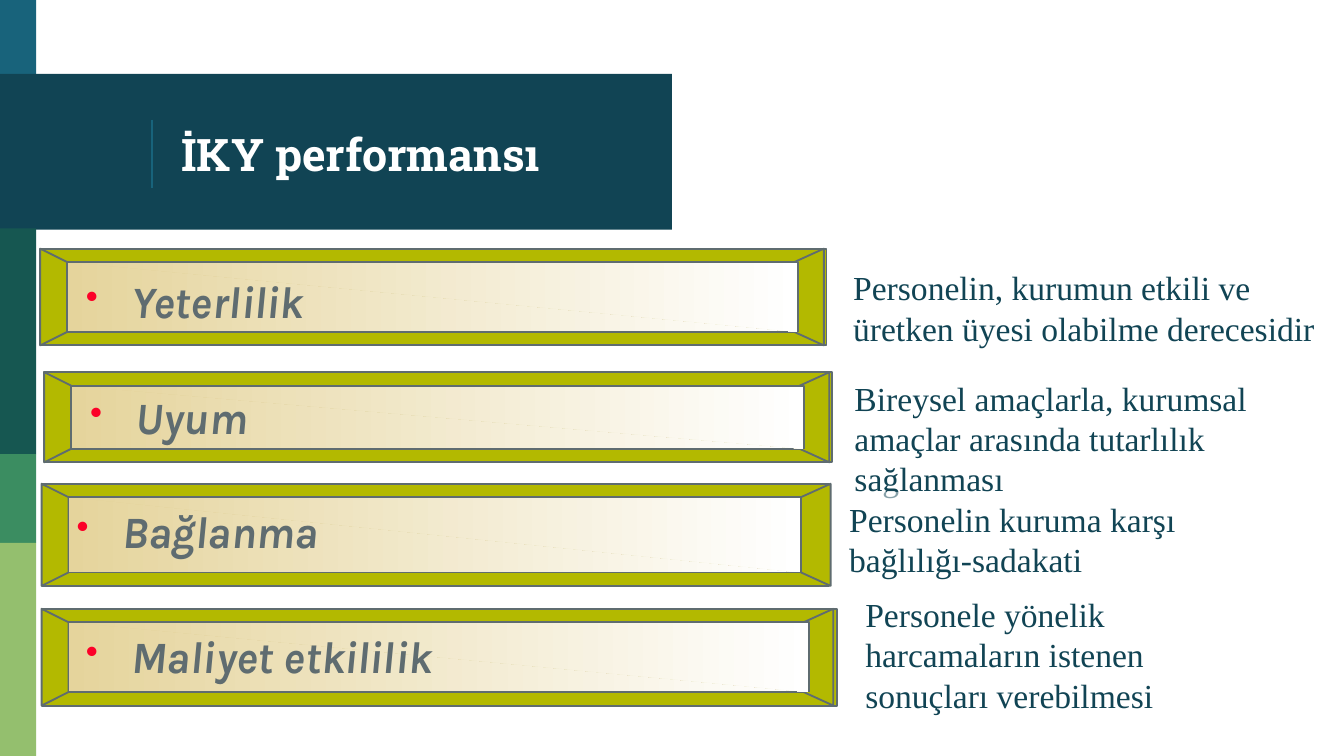
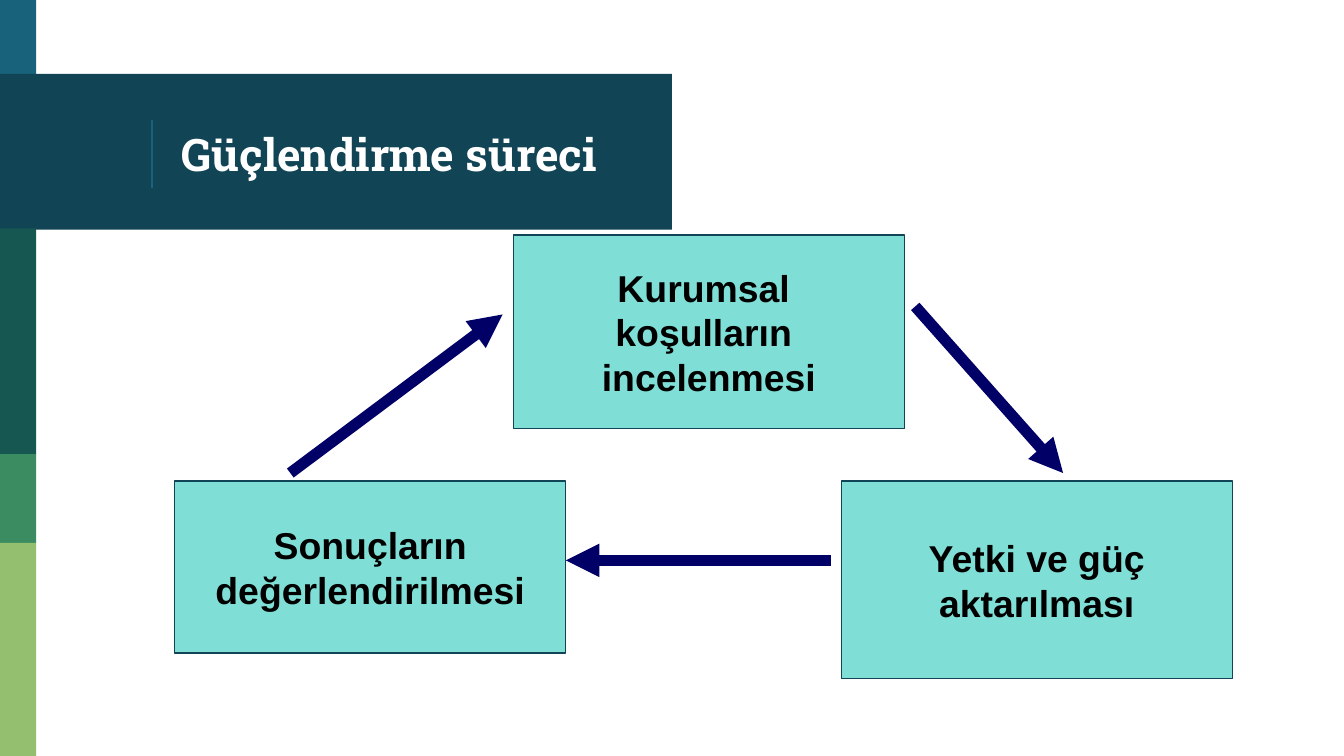
from dataclasses import dataclass
from typing import Optional

from lxml import etree
from pptx import Presentation
from pptx import util as u
from pptx.dml.color import RGBColor
from pptx.enum import shapes, text
from pptx.oxml.ns import qn

PX = u.Inches(1) // 100

WHITE = RGBColor(0xFF, 0xFF, 0xFF)
BLACK = RGBColor(0x00, 0x00, 0x00)
BLUE = RGBColor(0x18, 0x63, 0x7B)
NAVY = RGBColor(0x11, 0x44, 0x54)
PINE = RGBColor(0x16, 0x57, 0x51)
GREEN = RGBColor(0x3B, 0x8D, 0x61)
LEAF = RGBColor(0x94, 0xBF, 0x6E)
OLIVE = RGBColor(0xB3, 0xB9, 0x00)
SAND = RGBColor(0xE5, 0xD4, 0x9C)
SLATE = RGBColor(0x5F, 0x6C, 0x70)
RED = RGBColor(0xFC, 0x01, 0x28)
AQUA = RGBColor(0x7F, 0xDF, 0xD6)
INK = RGBColor(0x00, 0x00, 0x66)


@dataclass(frozen=True)
class Box:
    x: int
    y: int
    w: int
    h: int

    def emu(self) -> tuple[int, ...]:
        return tuple(v * PX for v in (self.x, self.y, self.w, self.h))


@dataclass(frozen=True)
class Band:
    box: Box
    color: RGBColor


@dataclass(frozen=True)
class Bar:
    label: str
    box: Box
    cap_right: int
    label_box: Box


@dataclass(frozen=True)
class Note:
    content: str
    box: Box
    wrap: bool = True


@dataclass(frozen=True)
class Step:
    content: str
    box: Box


@dataclass(frozen=True)
class Arrow:
    x1: int
    y1: int
    x2: int
    y2: int


BANDS = [
    Band(Box(0, 0, 27, 58), BLUE),
    Band(Box(0, 55, 500, 116), NAVY),
    Band(Box(0, 170, 27, 168), PINE),
    Band(Box(0, 338, 27, 66), GREEN),
    Band(Box(0, 404, 27, 159), LEAF),
]
TITLE_RULE = Arrow(113, 89, 113, 140)
TITLE_BOX = Box(125, 58, 351, 112)

BARS = [
    Bar("Yeterlilik", Box(30, 185, 585, 72), 613, Box(55, 199, 206, 73)),
    Bar("Uyum", Box(33, 277, 586, 67), 617, Box(58, 285, 152, 69)),
    Bar("Bağlanma", Box(31, 360, 586, 76), 618, Box(48, 370, 222, 50)),
    Bar("Maliyet etkililik", Box(31, 453, 592, 72), 620, Box(55, 463, 316, 74)),
]
NOTES = [
    Note("Personelin, kurumun etkili ve üretken üyesi olabilme derecesidir",
         Box(625, 194, 383, 71)),
    Note("Bireysel amaçlarla, kurumsal amaçlar arasında tutarlılık sağlanması",
         Box(626, 276, 360, 101)),
    Note("Personelin kuruma karşı\nbağlılığı-sadakati", Box(622, 366, 266, 71), wrap=False),
    Note("Personele yönelik harcamaların istenen sonuçları verebilmesi",
         Box(634, 437, 273, 101)),
]
STEPS = [
    Step("Kurumsal \nkoşulların \nincelenmesi", Box(382, 175, 291, 144)),
    Step("Yetki ve güç\naktarılması", Box(626, 358, 291, 147)),
    Step("Sonuçların\ndeğerlendirilmesi", Box(130, 358, 291, 128)),
]
ARROWS = [
    Arrow(681, 228, 791, 352),
    Arrow(618, 417, 421, 417),
    Arrow(216, 352, 374, 234),
]


def write(tf, content: str, *, font: str, size: int, color: RGBColor,
          bold: bool = False, italic: bool = False,
          align: text.PP_ALIGN = text.PP_ALIGN.LEFT) -> None:
    for i, line in enumerate(content.split("\n")):
        p = tf.add_paragraph() if i else tf.paragraphs[0]
        p.alignment = align
        r = p.add_run()
        r.text = line
        r.font.name, r.font.size = font, u.Pt(size)
        r.font.bold, r.font.italic = bold, italic
        r.font.color.rgb = color


def set_frame(tf, *, wrap: bool, anchor: text.MSO_ANCHOR, grow: bool = False,
              side: int = 10, edge: int = 5) -> None:
    tf.word_wrap = wrap
    tf.vertical_anchor = anchor
    tf.auto_size = text.MSO_AUTO_SIZE.SHAPE_TO_FIT_TEXT if grow else text.MSO_AUTO_SIZE.NONE
    tf.margin_left = tf.margin_right = side * PX
    tf.margin_top = tf.margin_bottom = edge * PX


def add_bullet(p) -> None:
    p.space_before = u.Pt(5)
    pPr = p._p.get_or_add_pPr()
    pPr.set("marL", str(34 * PX))
    pPr.set("indent", str(-34 * PX))
    clr = etree.SubElement(pPr, qn("a:buClr"))
    etree.SubElement(clr, qn("a:srgbClr"), val=str(RED))
    etree.SubElement(pPr, qn("a:buSzPct"), val="80000")
    etree.SubElement(pPr, qn("a:buChar"), char="•")


def add_rect(s, box: Box, fill: RGBColor, line: Optional[RGBColor] = None,
             alpha: int = 100):
    sp = s.shapes.add_shape(shapes.MSO_SHAPE.RECTANGLE, *box.emu())
    sp.shadow.inherit = False
    sp.fill.solid()
    sp.fill.fore_color.rgb = fill
    if alpha < 100:
        clr = sp.element.spPr.find(".//" + qn("a:srgbClr"))
        etree.SubElement(clr, qn("a:alpha"), val=str(alpha * 1000))
    if line is None:
        sp.line.fill.background()
    else:
        sp.line.color.rgb = line
        sp.line.width = u.Pt(0.75)
    return sp


def add_line(s, a: Arrow, color: RGBColor, width: float, head: bool = False):
    c = s.shapes.add_connector(shapes.MSO_CONNECTOR.STRAIGHT,
                               a.x1 * PX, a.y1 * PX, a.x2 * PX, a.y2 * PX)
    c.line.color.rgb = color
    c.line.width = u.Pt(width)
    if head:
        etree.SubElement(c.line._get_or_add_ln(), qn("a:tailEnd"), type="triangle")
    etree.SubElement(c.element.spPr, qn("a:effectLst"))
    return c


def add_facet(group, points: list[tuple[int, int]], *, gradient: bool = False,
              close: bool = True) -> None:
    fb = group.shapes.build_freeform(*points[0], scale=PX)
    fb.add_line_segments(points[1:], close=close)
    sp = fb.convert_to_shape()
    sp.shadow.inherit = False
    if gradient:
        sp.fill.gradient()
        sp.fill.gradient_angle = 0
        for stop, color in zip(sp.fill.gradient_stops, (SAND, WHITE)):
            stop.color.rgb = color
    else:
        sp.fill.solid()
        sp.fill.fore_color.rgb = OLIVE
    sp.line.color.rgb = SLATE
    sp.line.width = u.Pt(1)


def add_bar(s, bar: Bar) -> None:
    group = s.shapes.add_group_shape()
    x, y = bar.box.x, bar.box.y
    right, bottom = x + bar.box.w, y + bar.box.h
    top_in, bottom_in = y + 10, bottom - 10
    left_in, right_in = x + 20, right - 20
    cap = bar.cap_right
    add_facet(group, [(x, y), (x, bottom), (right, bottom), (right, y)])
    add_facet(group, [(x, bottom), (left_in, bottom_in), (left_in, top_in), (x, y)])
    add_facet(group, [(left_in, top_in), (left_in, bottom_in),
                      (right_in, bottom_in), (right_in, top_in)], gradient=True)
    add_facet(group, [(cap, bottom), (cap - 22, bottom_in), (cap - 22, top_in), (cap, y)])
    add_facet(group, [(left_in + 1, top_in), (right_in - 1, top_in),
                      (right_in - 1, bottom_in)], gradient=True, close=False)
    tf = group.shapes.add_textbox(*bar.label_box.emu()).text_frame
    set_frame(tf, wrap=False, anchor=text.MSO_ANCHOR.TOP, grow=True, side=9)
    write(tf, bar.label, font="Karla", size=24, color=SLATE, bold=True, italic=True)
    add_bullet(tf.paragraphs[0])


def add_note(s, note: Note) -> None:
    tf = add_rect(s, note.box, WHITE, alpha=50).text_frame
    set_frame(tf, wrap=note.wrap, anchor=text.MSO_ANCHOR.TOP, grow=True)
    write(tf, note.content, font="Times New Roman", size=18, color=NAVY)


def add_step(s, step: Step) -> None:
    tf = add_rect(s, step.box, AQUA, line=NAVY).text_frame
    set_frame(tf, wrap=False, anchor=text.MSO_ANCHOR.MIDDLE)
    write(tf, step.content, font="Arial", size=20, color=BLACK, bold=True,
          align=text.PP_ALIGN.CENTER)


def style_layout(layout, s) -> None:
    title, *footers = layout.placeholders
    for ph in footers:
        layout.shapes.element.remove(ph.element)
    title.left, title.top, title.width, title.height = TITLE_BOX.emu()
    set_frame(title.text_frame, wrap=True, anchor=text.MSO_ANCHOR.MIDDLE, edge=10)
    frame = [add_rect(s, band.box, band.color) for band in BANDS]
    frame.append(add_line(s, TITLE_RULE, BLUE, 0.75))
    for sp in frame:
        title.element.addprevious(sp.element)


def set_title(s, content: str) -> None:
    write(s.shapes.title.text_frame, content, font="Roboto Slab", size=24,
          color=WHITE, bold=True)


def main() -> None:
    prs = Presentation()
    prs.slide_width = 1000 * PX
    prs.slide_height = prs.slide_width * 9 // 16
    layout = prs.slide_layouts[5]

    s = prs.slides.add_slide(layout)
    style_layout(layout, s)
    set_title(s, "İKY performansı")
    for bar in BARS:
        add_bar(s, bar)
    for note in NOTES:
        add_note(s, note)

    s = prs.slides.add_slide(layout)
    set_title(s, "Güçlendirme süreci")
    for step in STEPS:
        add_step(s, step)
    for arrow in ARROWS:
        add_line(s, arrow, INK, 6, head=True)

    prs.save("out.pptx")


if __name__ == "__main__":
    main()
